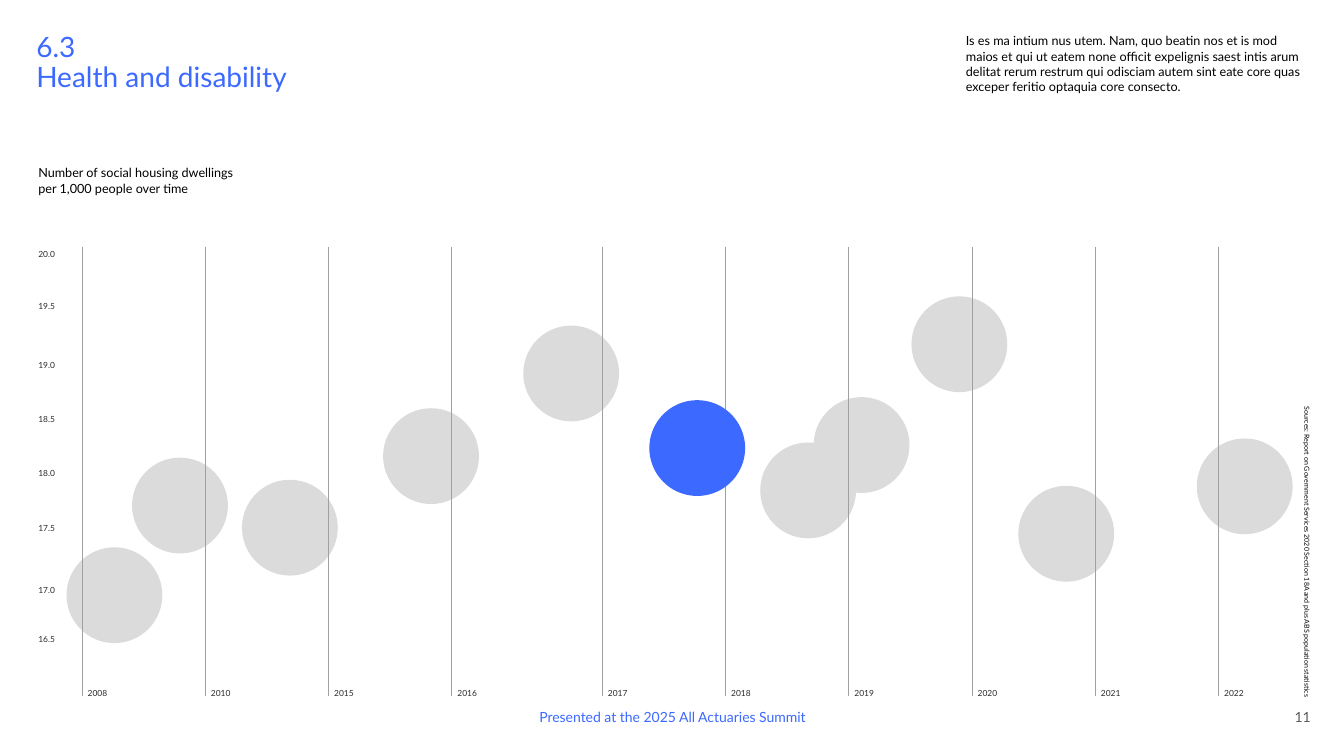
from pptx import Presentation
from pptx.dml.color import RGBColor
from pptx.enum.shapes import MSO_CONNECTOR, MSO_SHAPE
from pptx.enum.text import MSO_ANCHOR, PP_ALIGN
from pptx.oxml.ns import qn
from pptx.util import Pt
from lxml import etree

LEFT, MID, RIGHT = PP_ALIGN.LEFT, PP_ALIGN.CENTER, PP_ALIGN.RIGHT
TOP, BOTTOM = MSO_ANCHOR.TOP, MSO_ANCHOR.BOTTOM
OVAL, STRAIGHT = MSO_SHAPE.OVAL, MSO_CONNECTOR.STRAIGHT

BLUE = RGBColor(0x3C, 0x69, 0xFF)
BLACK = RGBColor(0, 0, 0)
INK = RGBColor(0x2B, 0x2B, 0x2A)
GREY = RGBColor(0x5B, 0x5B, 0x5B)
PALE = RGBColor(0xDC, 0xDB, 0xDB)
RULE = RGBColor(0xA0, 0xA0, 0x9F)

# Content
TITLE = "6.3 \vHealth and disability"
INTRO = ("Is es ma intium nus utem. Nam, quo beatin nos et is mod maios et qui ut "
         "eatem none officit expelignis saest intis arum delitat rerum restrum qui "
         "odisciam autem sint eate core quas exceper feritio optaquia core consecto.")
HEAD = "Number of social housing dwellings\nper 1,000 people over time"
SOURCE = ("Sources: Report on Government Services 2020 Section 18A and plus "
          "ABS population statistics")
FOOTER = "Presented at the 2025 All Actuaries Summit"
PAGE = "11"

# Year groups: first line x, then years at an equal step
YEARS = [(81, ["2008", "2010", "2015", "2016"]),
         (597, ["2017", "2018", "2019", "2020", "2021", "2022"])]
STEP = 122.25
# Scale labels and their tops
SCALE = [("20.0", 247), ("19.5", 299), ("19.0", 357), ("18.5", 411),
         ("18.0", 464), ("17.5", 519), ("17.0", 580), ("16.5", 629)]
# Bubble left and top
DOTS = [(131, 454), (240, 476), (66, 543), (380, 405), (519, 323),
        (754, 439), (807, 394), (904, 294), (1010, 482), (1187, 435)]
FOCUS = (644, 397)
SIZE = 95
LINE_TOP, LINE_END = 245, 690

UNIT = 9144  # EMU in one px, 100 px to the inch


def px(n):
    return round(n * UNIT)


deck = Presentation()
deck.slide_width, deck.slide_height = px(1333), px(750)
slide = deck.slides.add_slide(deck.slide_layouts[6])
shapes = slide.shapes


def add_text(text, box, size, color, align=LEFT, anchor=TOP, wrap=True, space=None):
    shape = shapes.add_textbox(*map(px, box))
    frame = shape.text_frame
    frame.margin_left = frame.margin_right = 0
    frame.margin_top = frame.margin_bottom = 0
    frame.word_wrap, frame.vertical_anchor = wrap, anchor
    frame.text = text
    for para in frame.paragraphs:
        para.alignment = align
        para.line_spacing = space
        para.font.name, para.font.size = "Lato", Pt(size)
        para.font.color.rgb = color
    return shape


def add_dot(left, top, color):
    dot = shapes.add_shape(OVAL, px(left), px(top), px(SIZE), px(SIZE))
    dot.shadow.inherit = False
    dot.fill.solid()
    dot.fill.fore_color.rgb = color
    dot.line.fill.background()


def add_rule(x):
    rule = shapes.add_connector(STRAIGHT, px(x), px(LINE_END), px(x), px(LINE_TOP))
    rule.line.color.rgb = RULE
    rule.line.width = Pt(0.15)
    etree.SubElement(rule.element.spPr, qn("a:effectLst"))


# Title, intro and page number
add_text(TITLE, (36, 33, 591, 135), 20, BLUE, space=0.9)
add_text(INTRO, (958, 33, 342, 132), 9, BLACK)
add_text(PAGE, (1254, 700, 46, 20), 10, GREY, RIGHT, BOTTOM)

# Bubbles, then year lines over them, then the blue bubble
for left, top in DOTS:
    add_dot(left, top, PALE)
for start, years in YEARS:
    for i, year in enumerate(years):
        x = start + i * STEP
        add_rule(x)
        add_text(year, (x + 6, 683, 37, 19), 6, INK, wrap=False)
add_dot(*FOCUS, BLUE)

# Scale labels
for label, top in SCALE:
    add_text(label, (38, top, 38, 21), 6, INK, wrap=False)

# Chart heading, source and footer
add_text(HEAD, (38, 164, 215, 60), 9, BLACK)
note = add_text(SOURCE, (1131, 522, 319, 20), 5, BLACK, RIGHT)
note.rotation = 90
add_text(FOOTER, (442, 700, 450, 20), 10, BLUE, MID, BOTTOM)

deck.save("out.pptx")
